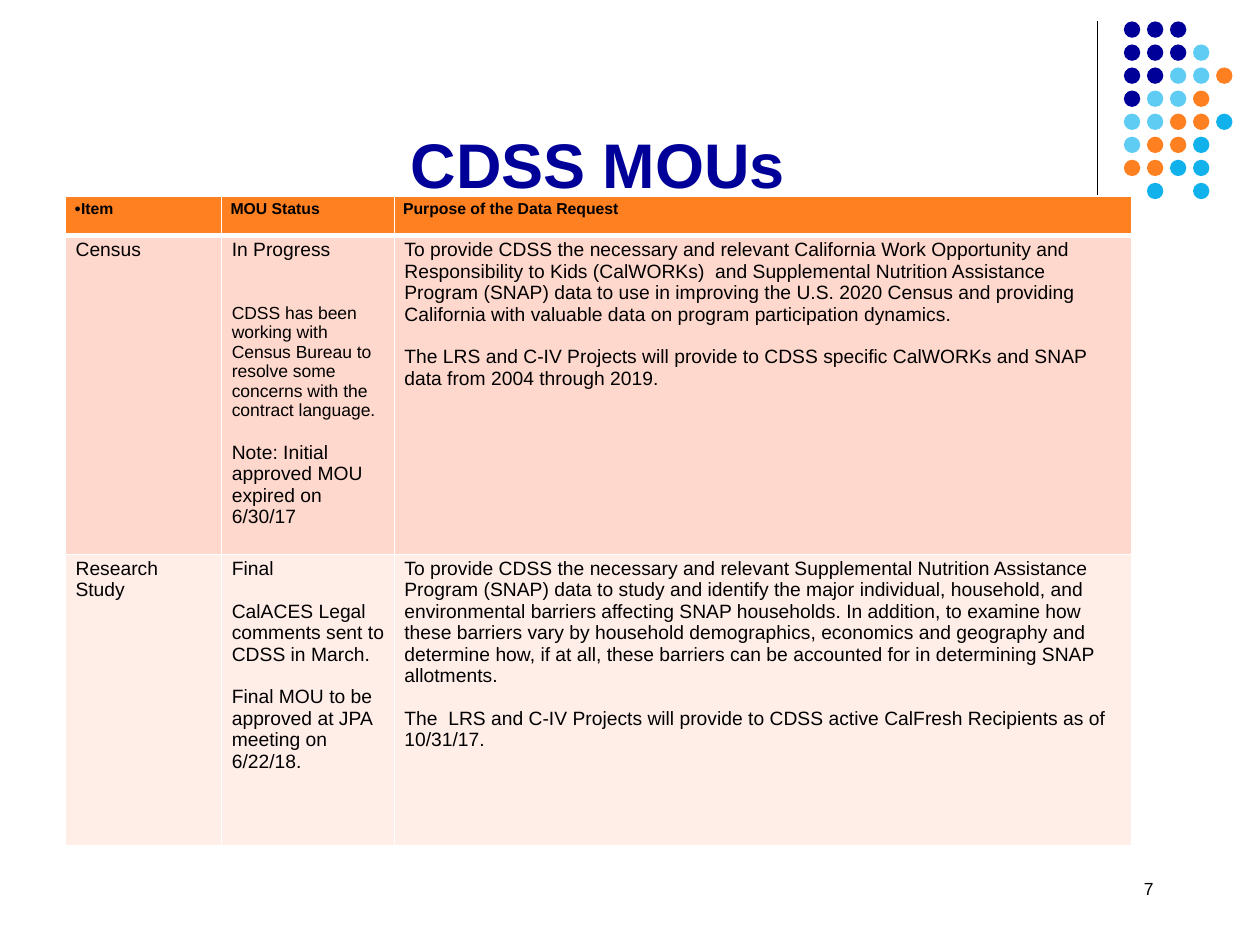
import pptx
import pptx.util
import pptx.dml.color
import pptx.enum.shapes
import pptx.enum.text
import pptx.oxml.ns
import lxml.etree

Inches = pptx.util.Inches
Pt = pptx.util.Pt
RGBColor = pptx.dml.color.RGBColor
qn = pptx.oxml.ns.qn

NAVY = RGBColor(0x00, 0x00, 0x99)
SKY = RGBColor(0x5E, 0xCC, 0xF3)
ORANGE = RGBColor(0xFF, 0x80, 0x21)
BLUE = RGBColor(0x11, 0xB2, 0xEB)
ROSE = RGBColor(0xFF, 0xD8, 0xCD)
BLUSH = RGBColor(0xFF, 0xED, 0xE8)
BLACK = RGBColor(0, 0, 0)
WHITE = RGBColor(0xFF, 0xFF, 0xFF)

HUES = {"N": NAVY, "S": SKY, "O": ORANGE, "B": BLUE}
DOTS = ["NNN", "NNNS", "NNSSO", "NSSO", "SSOOB", "SOOB", "OOBB", " B B"]

COLS = [1.24, 1.37, 5.85]
ROWS = [0.31, 2.53, 2.31]
FILLS = [ORANGE, ROSE, BLUSH]
LINE = 12.2  # height of one line of 11 pt text

# Each cell lists its paragraphs as (text, size, space before).
CELLS = [
    [
        [("Item", 9, 0)],
        [("MOU Status", 9, 0)],
        [("Purpose of the Data Request", 9, 0)],
    ],
    [
        [("Census", 11, 0)],
        [
            ("In Progress", 11, 0),
            ("CDSS has been working with Census Bureau to resolve some "
             "concerns with the contract language.", 10, 2 * LINE),
            ("Note: Initial approved MOU expired on 6/30/17", 11, LINE),
        ],
        [
            ("To provide CDSS the necessary and relevant California Work "
             "Opportunity and Responsibility to Kids (CalWORKs)  and "
             "Supplemental Nutrition Assistance Program (SNAP) data to use in "
             "improving the U.S. 2020 Census and providing California with "
             "valuable data on program participation dynamics.", 11, 0),
            ("The LRS and C-IV Projects will provide to CDSS specific CalWORKs "
             "and SNAP data from 2004 through 2019.", 11, LINE),
        ],
    ],
    [
        [("Research Study", 11, 0)],
        [
            ("Final", 11, 0),
            ("CalACES Legal comments sent to CDSS in March.", 11, LINE),
            ("Final MOU to be approved at JPA meeting on 6/22/18.", 11, LINE),
        ],
        [
            ("To provide CDSS the necessary and relevant Supplemental "
             "Nutrition Assistance Program (SNAP) data to study and identify "
             "the major individual, household, and environmental barriers "
             "affecting SNAP households. In addition, to examine how these "
             "barriers vary by household demographics, economics and geography "
             "and determine how, if at all, these barriers can be accounted "
             "for in determining SNAP allotments.", 11, 0),
            ("The  LRS and C-IV Projects will provide to CDSS active CalFresh "
             "Recipients as of 10/31/17.", 11, LINE),
        ],
    ],
]


def style(para, size, color, bold=False):
    for run in para.runs:
        run.font.name = "Arial"
        run.font.size = Pt(size)
        run.font.bold = bold
        run.font.color.rgb = color


def add_rule(slide):
    rule = slide.shapes.add_connector(
        pptx.enum.shapes.MSO_CONNECTOR.STRAIGHT,
        Inches(8.71), Inches(0.17), Inches(8.71), Inches(1.55))
    rule.line.color.rgb = BLACK
    rule.line.width = Pt(0.75)
    lxml.etree.SubElement(rule._element.spPr, qn("a:effectLst"))


def add_dots(slide):
    group = slide.shapes.add_group_shape()
    step, size = 0.183, Inches(0.13)
    for row, marks in enumerate(DOTS):
        for col, mark in enumerate(marks):
            if mark == " ":
                continue
            dot = group.shapes.add_shape(
                pptx.enum.shapes.MSO_SHAPE.OVAL,
                Inches(8.92 + col * step), Inches(0.17 + row * step),
                size, size)
            dot.shadow.inherit = False
            dot.fill.solid()
            dot.fill.fore_color.rgb = HUES[mark]
            dot.line.fill.background()


def add_title(slide):
    title = slide.shapes.title
    title.left, title.top = Inches(1.62), Inches(0.94)
    title.width, title.height = Inches(6.25), Inches(0.71)
    frame = title.text_frame
    frame.text = "CDSS MOUs"
    frame.vertical_anchor = pptx.enum.text.MSO_ANCHOR.BOTTOM
    para = frame.paragraphs[0]
    para.alignment = pptx.enum.text.PP_ALIGN.CENTER
    style(para, 36, NAVY, True)


def add_edge(cell, side, width):
    props = cell._tc.get_or_add_tcPr()
    edge = lxml.etree.SubElement(props, qn("a:ln" + side), w=str(Pt(width)))
    fill = lxml.etree.SubElement(edge, qn("a:solidFill"))
    lxml.etree.SubElement(fill, qn("a:srgbClr"), val=str(WHITE))


def add_bullet(para):
    props = para._p.get_or_add_pPr()
    props.set("marL", "0")
    props.set("indent", "0")
    lxml.etree.SubElement(props, qn("a:buSzPct"), val="70000")
    lxml.etree.SubElement(props, qn("a:buFont"), typeface="Arial")
    lxml.etree.SubElement(props, qn("a:buChar"), char="●")


def fill_cell(cell, paras, fill, head, below):
    """Fill one cell; head marks the top row, below the row under it."""
    for side, width in (("L", 1), ("R", 1), ("T", 3 if below else 1),
                        ("B", 3 if head else 1)):
        add_edge(cell, side, width)
    cell.fill.solid()
    cell.fill.fore_color.rgb = fill
    cell.margin_left = cell.margin_right = Inches(0.07 if head else 0.08)
    cell.margin_top = cell.margin_bottom = Inches(0.03)
    frame = cell.text_frame
    frame.text = "\n".join(text for text, size, gap in paras)
    for para, (text, size, gap) in zip(frame.paragraphs, paras):
        if gap:
            para.space_before = Pt(gap)
        style(para, size, BLACK, head)


def add_grid(slide):
    grid = slide.shapes.add_table(
        len(ROWS), len(COLS), Inches(0.52), Inches(1.56),
        Inches(sum(COLS)), Inches(sum(ROWS))).table
    grid.first_row = grid.horz_banding = False
    for col, width in zip(grid.columns, COLS):
        col.width = Inches(width)
    for i, height in enumerate(ROWS):
        grid.rows[i].height = Inches(height)
        for j, paras in enumerate(CELLS[i]):
            fill_cell(grid.cell(i, j), paras, FILLS[i], i == 0, i == 1)
    add_bullet(grid.cell(0, 0).text_frame.paragraphs[0])


def add_number(slide):
    box = slide.shapes.add_textbox(
        Inches(8.98), Inches(6.92), Inches(0.27), Inches(0.27))
    box.text_frame.word_wrap = True
    box.text_frame.text = "7"
    style(box.text_frame.paragraphs[0], 10, BLACK)


def main():
    deck = pptx.Presentation()
    deck.slide_width, deck.slide_height = Inches(10), Inches(7.5)
    slide = deck.slides.add_slide(deck.slide_layouts[5])
    add_rule(slide)
    add_dots(slide)
    add_title(slide)
    add_grid(slide)
    add_number(slide)
    deck.save("out.pptx")


if __name__ == "__main__":
    main()
